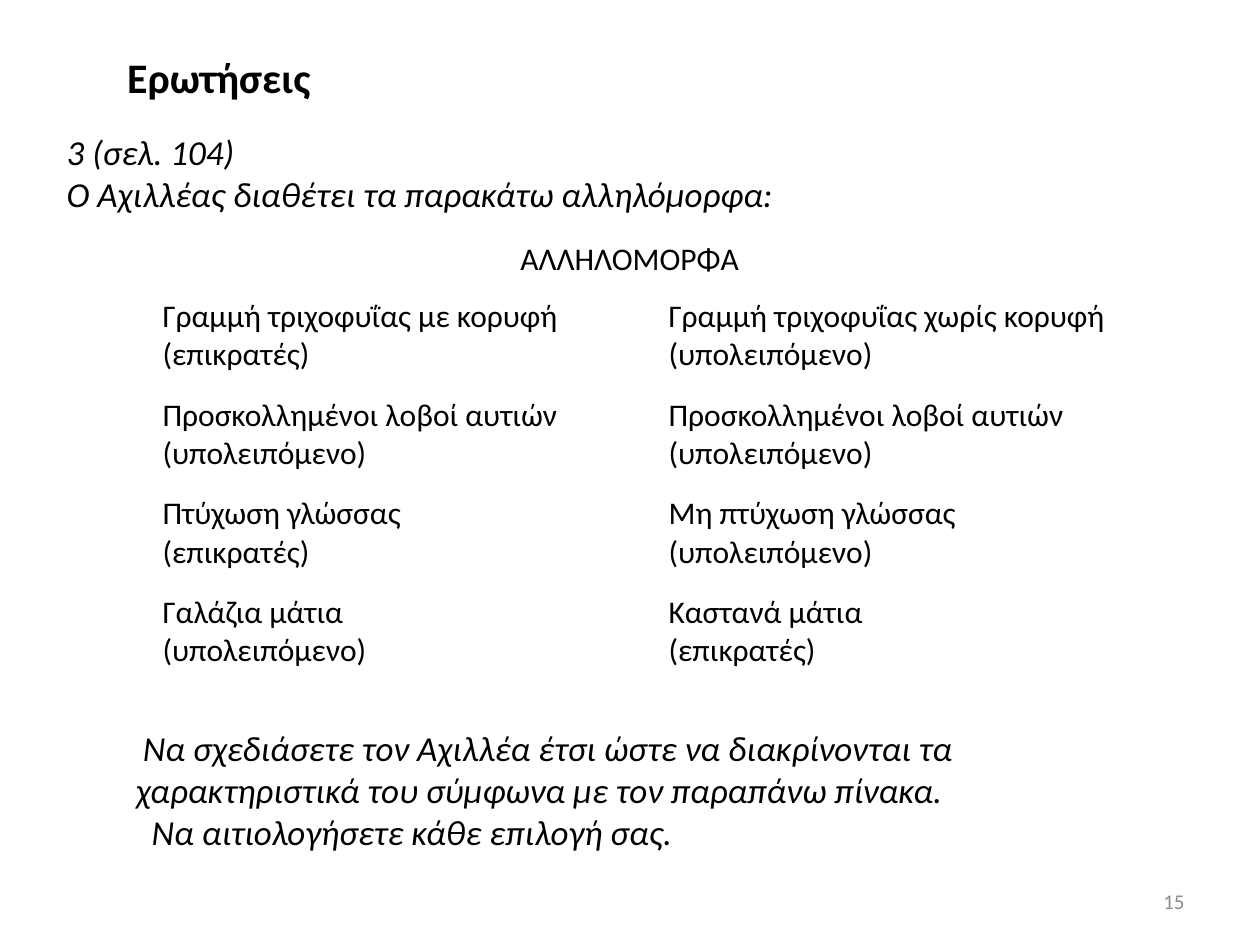
from pptx import Presentation
from pptx.dml.color import RGBColor
from pptx.enum import text as t
from pptx.util import Pt


def color(hex_value):
    return RGBColor.from_string(hex_value)


class Sheet:
    font = "Calibri"
    ink = "000000"
    muted = "8C8C8C"

    def __init__(self, prs):
        self.slide = prs.slides.add_slide(prs.slide_layouts[6])

    def fill_frame(self, frame, lines, size, ink=None, align=t.PP_ALIGN.LEFT,
                   indents=(), **formats):
        """Fill a text frame, one paragraph per line."""
        for i, line in enumerate(lines):
            para = frame.paragraphs[0] if i == 0 else frame.add_paragraph()
            para.alignment = align
            if indents:
                para._p.get_or_add_pPr().set("indent", str(Pt(indents[i])))
            run = para.add_run()
            run.text = line
            run.font.color.rgb = color(ink or self.ink)
            for key, value in {"name": self.font, "size": Pt(size), **formats}.items():
                setattr(run.font, key, value)

    def text(self, box, lines, size, wrap=True, anchor=t.MSO_ANCHOR.TOP, **style):
        frame = self.slide.shapes.add_textbox(*map(Pt, box)).text_frame
        frame.word_wrap = wrap
        frame.vertical_anchor = anchor
        self.fill_frame(frame, lines, size, **style)

    def cell(self, cell, lines, left, **style):
        margins = {"margin_left": left, "margin_right": 3.6,
                   "margin_top": 3.6, "margin_bottom": 3.6}
        for key, value in margins.items():
            setattr(cell, key, Pt(value))
        self.fill_frame(cell.text_frame, lines, 18, **style)

    def table(self, box, heading, rows, heading_height, row_height):
        table = self.slide.shapes.add_table(len(rows) + 1, 2, *map(Pt, box)).table
        table.first_row = table.horz_banding = False
        for row in table.rows:
            row.height = Pt(row_height)
        table.rows[0].height = Pt(heading_height)
        for cell in table.iter_cells():
            cell.fill.background()
        table.cell(0, 0).merge(table.cell(0, 1))
        self.cell(table.cell(0, 0), [heading], 3.6, align=t.PP_ALIGN.CENTER)
        for r, pair in enumerate(rows, 1):
            for c, lines in enumerate(pair):
                self.cell(table.cell(r, c), lines, 22.3)


def main():
    prs = Presentation()
    prs.slide_width, prs.slide_height = Pt(720), Pt(540)
    sheet = Sheet(prs)

    # Title and question
    sheet.text((65.5, 26, 120, 36), ["Ερωτήσεις"], 24, wrap=False, bold=True)
    sheet.text((31, 71.3, 629, 99),
               ["3 (σελ. 104)", "Ο Αχιλλέας διαθέτει τα παρακάτω αλληλόμορφα:"],
               20, italic=True)

    # Allele pairs
    alleles = [
        (["Γραμμή τριχοφυΐας με κορυφή (επικρατές)"],
         ["Γραμμή τριχοφυΐας χωρίς κορυφή (υπολειπόμενο)"]),
        (["Προσκολλημένοι λοβοί αυτιών (υπολειπόμενο)"],) * 2,
        (["Πτύχωση γλώσσας", "(επικρατές)"],
         ["Μη πτύχωση γλώσσας (υπολειπόμενο)"]),
        (["Γαλάζια μάτια", "(υπολειπόμενο)"],
         ["Καστανά μάτια", "(επικρατές)"]),
    ]
    sheet.table((70.6, 134, 578.4, 258), "ΑΛΛΗΛΟΜΟΡΦΑ", alleles, 32.4, 56.4)

    # Task
    sheet.text((70.6, 411.8, 566.6, 80),
               ["Να σχεδιάσετε τον Αχιλλέα έτσι ώστε να διακρίνονται τα "
                "χαρακτηριστικά του σύμφωνα με τον παραπάνω πίνακα.",
                "Να αιτιολογήσετε κάθε επιλογή σας."],
               20, indents=(4, 9), italic=True)

    # Page number
    sheet.text((516, 500.5, 168, 28.75), ["15"], 12, anchor=t.MSO_ANCHOR.MIDDLE,
               ink=sheet.muted, align=t.PP_ALIGN.RIGHT)

    prs.save("out.pptx")


if __name__ == "__main__":
    main()
